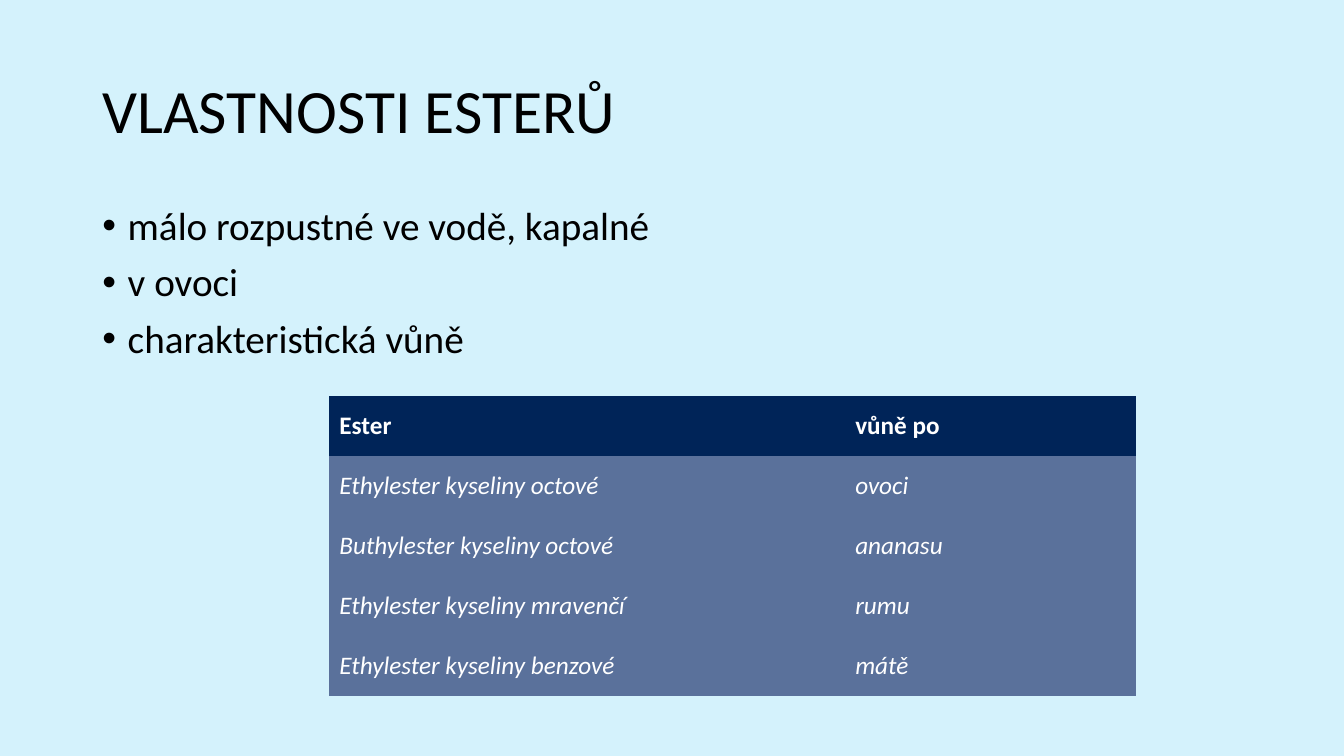
"""Build a slide on the properties of esters with a table of their scents."""
from lxml import etree
from pptx import Presentation
from pptx.dml.color import RGBColor
from pptx.enum.text import MSO_ANCHOR, MSO_AUTO_SIZE, PP_ALIGN
from pptx.oxml.ns import qn
from pptx.util import Cm, Pt

LEFT = PP_ALIGN.LEFT
MIDDLE = MSO_ANCHOR.MIDDLE
NO_FIT = MSO_AUTO_SIZE.NONE

TITLE = "VLASTNOSTI ESTERŮ"
PROPERTIES = ["málo rozpustné ve vodě, kapalné", "v ovoci", "charakteristická vůně"]
SCENTS = [
    ("Ester", "vůně po"),
    ("Ethylester kyseliny octové", "ovoci"),
    ("Buthylester kyseliny octové", "ananasu"),
    ("Ethylester kyseliny mravenčí", "rumu"),
    ("Ethylester kyseliny benzové", "mátě"),
]
FONT = "Calibri"
BACKGROUND, BLACK, WHITE = "D4F2FC", "000000", "FFFFFF"
HEADER_FILL, ROW_FILL = "002458", "5A719B"
MARGIN, TEXT_W = Cm(2.33), Cm(29.21)
COL_WIDTHS = [Cm(13), Cm(7.32)]
ROW_H = Cm(1.51)
INDENT = Cm(0.64)


def paint(fill, color):
    fill.solid()
    fill.fore_color.rgb = RGBColor.from_string(color)


def add_run(p, text, size, color, bold=False, italic=False):
    r = p.add_run()
    r.text = text
    r.font.name = FONT
    r.font.size = Pt(size)
    r.font.bold = bold
    r.font.italic = italic
    r.font.color.rgb = RGBColor.from_string(color)


def add_bullet(p):
    pPr = p._p.get_or_add_pPr()
    pPr.set("marL", str(INDENT))
    pPr.set("indent", str(-INDENT))
    etree.SubElement(pPr, qn("a:buFont")).set("typeface", "Arial")
    etree.SubElement(pPr, qn("a:buChar")).set("char", "•")


def add_title(s):
    sp = s.shapes.title
    sp.left, sp.top, sp.width, sp.height = MARGIN, Cm(1.01), TEXT_W, Cm(3.68)
    tf = sp.text_frame
    tf.vertical_anchor = MIDDLE
    tf.auto_size = NO_FIT
    p = tf.paragraphs[0]
    p.alignment = LEFT
    p.line_spacing = 0.9
    add_run(p, TITLE, 44, BLACK)


def add_properties(s):
    tf = s.shapes.add_textbox(MARGIN, Cm(5.08), TEXT_W, Cm(12.09)).text_frame
    tf.word_wrap = True
    for i, text in enumerate(PROPERTIES):
        p = tf.add_paragraph() if i else tf.paragraphs[0]
        p.line_spacing = 0.9
        p.space_before = Pt(10)
        add_bullet(p)
        add_run(p, text, 28, BLACK)


def add_scents(s):
    rows, cols = len(SCENTS), len(COL_WIDTHS)
    table = s.shapes.add_table(
        rows, cols, Cm(8.3), Cm(9.98), sum(COL_WIDTHS), ROW_H * rows
    ).table
    for column, width in zip(table.columns, COL_WIDTHS):
        column.width = width
    for i, values in enumerate(SCENTS):
        header = i == 0
        table.rows[i].height = ROW_H
        for j, text in enumerate(values):
            cell = table.cell(i, j)
            cell.vertical_anchor = MIDDLE
            paint(cell.fill, HEADER_FILL if header else ROW_FILL)
            p = cell.text_frame.paragraphs[0]
            add_run(p, text, 18, WHITE, bold=header, italic=not header)
    tblPr = table._tbl.tblPr
    tblPr.find(qn("a:tableStyleId")).text = "{2D5ABB26-0587-4C30-8999-92F81FD0307C}"


def main():
    prs = Presentation()
    prs.slide_width, prs.slide_height = Cm(33.87), Cm(19.05)
    s = prs.slides.add_slide(prs.slide_layouts[5])
    paint(s.background.fill, BACKGROUND)
    add_title(s)
    add_properties(s)
    add_scents(s)
    prs.save("out.pptx")


if __name__ == "__main__":
    main()
